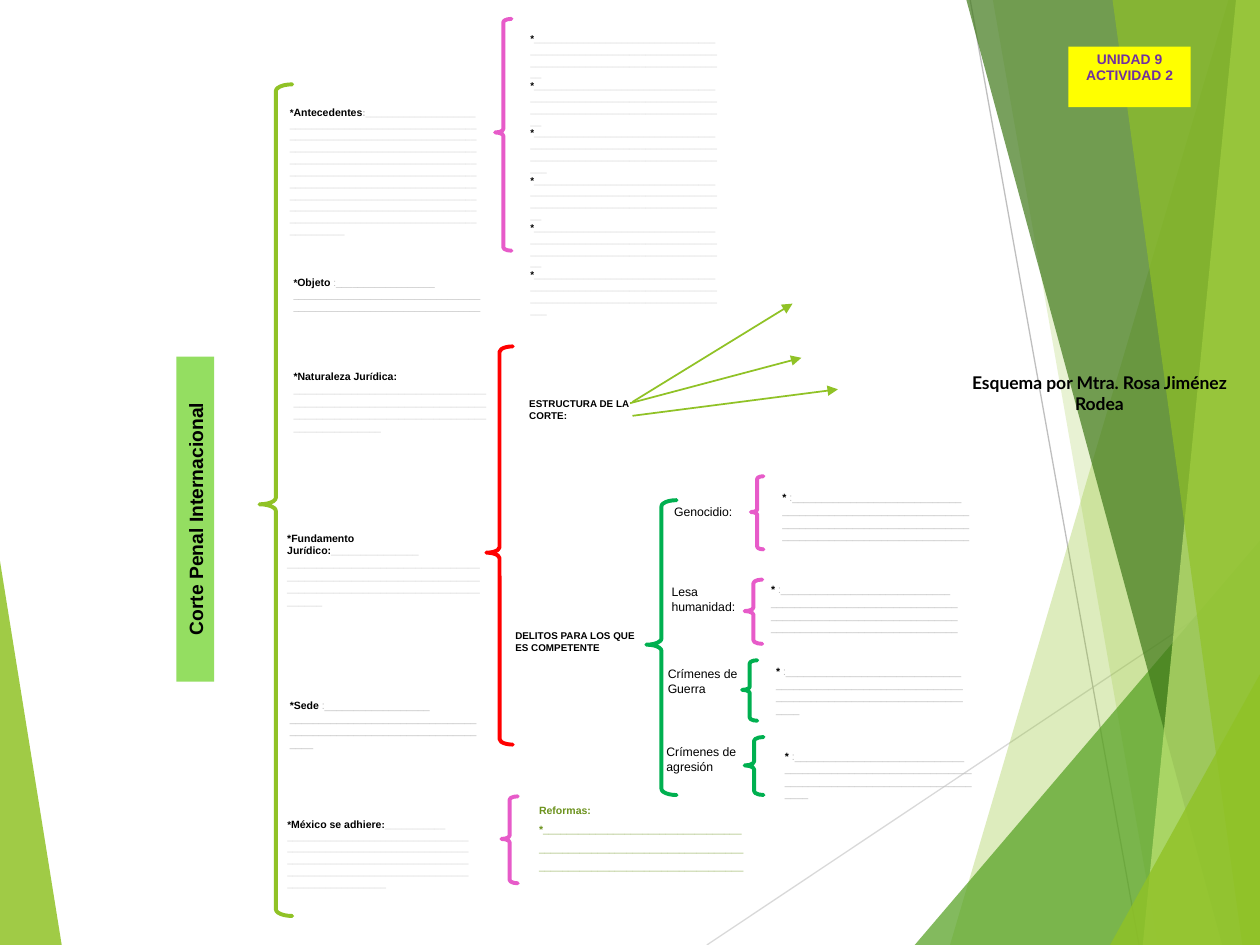
from lxml.etree import SubElement
from pptx import Presentation
from pptx.dml.color import RGBColor
from pptx.enum.shapes import MSO_CONNECTOR as Connector, MSO_SHAPE as Shape
from pptx.enum.text import MSO_ANCHOR as Anchor, PP_ALIGN as Align
from pptx.oxml.ns import qn
from pptx.util import Inches, Pt

LIME, GREEN, PINK, RED = "90C226", "00B050", "E75BC9", "FF0000"
BLACK, GRAY, WHITE = "000000", "BFBFBF", "FFFFFF"


def color(value):
    """Turn a hex string into a colour."""
    return RGBColor.from_string(value)


def run(text, size=6, tint=BLACK, bold=True, font="Arial"):
    """Describe one run of text."""
    return text, size, tint, bold, font


def rule(count, size=6, bold=True, lead=""):
    """Describe a gray writing line of underscores."""
    return run(lead + "_" * count, size, GRAY, bold)


def write(shape, paragraphs, inset=(0.06, 0.03), align=Align.LEFT, spacing=None, wrap=True):
    """Fill a shape with paragraphs made of described runs."""
    frame = shape.text_frame
    frame.word_wrap = wrap
    frame.vertical_anchor = Anchor.TOP
    frame.margin_left = frame.margin_right = Inches(inset[0])
    frame.margin_top = frame.margin_bottom = Inches(inset[1])
    for index, runs in enumerate(paragraphs):
        paragraph = frame.add_paragraph() if index else frame.paragraphs[0]
        paragraph.alignment = align
        paragraph.line_spacing = spacing
        for text, size, tint, bold, font in runs:
            piece = paragraph.add_run()
            piece.text = text
            piece.font.size, piece.font.bold, piece.font.name = Pt(size), bold, font
            piece.font.color.rgb = color(tint)


def add_note(slide, left, top, width, height, paragraphs, **layout):
    """Add a text box."""
    box = slide.shapes.add_textbox(Inches(left), Inches(top), Inches(width), Inches(height))
    write(box, paragraphs, **layout)
    return box


def add_panel(slide, left, top, width, height, fill, paragraphs, align=Align.LEFT):
    """Add a filled rectangle with text."""
    panel = slide.shapes.add_shape(
        Shape.RECTANGLE, Inches(left), Inches(top), Inches(width), Inches(height))
    panel.shadow.inherit = False
    panel.fill.solid()
    panel.fill.fore_color.rgb = color(fill)
    panel.line.fill.background()
    write(panel, paragraphs, align=align)
    return panel


def add_brace(slide, left, top, width, height, tint, middle=0.49):
    """Add a left brace whose point sits at the given share of its height."""
    brace = slide.shapes.add_shape(
        Shape.LEFT_BRACE, Inches(left), Inches(top), Inches(width), Inches(height))
    brace.shadow.inherit = False
    brace.fill.background()
    brace.line.color.rgb = color(tint)
    brace.line.width = Pt(2.25)
    brace.adjustments[0], brace.adjustments[1] = 0.204, middle
    brace._element.spPr.find(qn("a:ln")).set("cap", "rnd")


def add_line(slide, start, end, tint, width, arrow=False):
    """Add a straight line, with an arrowhead on request."""
    line = slide.shapes.add_connector(
        Connector.STRAIGHT, *(Inches(value) for value in (*start, *end)))
    line.line.color.rgb = color(tint)
    line.line.width = Pt(width)
    properties = line._element.spPr
    if arrow:
        SubElement(properties.find(qn("a:ln")), qn("a:tailEnd"), type="triangle")
    SubElement(properties, qn("a:effectLst"))


def add_facet(slide, points, tint, opacity):
    """Add a translucent polygon."""
    start, *others = [(Inches(x), Inches(y)) for x, y in points]
    builder = slide.shapes.build_freeform(*start)
    builder.add_line_segments(others, close=True)
    facet = builder.convert_to_shape()
    facet.shadow.inherit = False
    facet.fill.solid()
    facet.fill.fore_color.rgb = color(tint)
    facet.line.fill.background()
    tone = facet._element.spPr.find(qn("a:solidFill"))[0]
    SubElement(tone, qn("a:alpha"), val=str(opacity * 1000))


def add_backdrop(slide, right, bottom):
    """Draw the green facets and thin lines out to the given slide edges."""
    add_facet(slide, [(-0.01, 4.39), (0.49, bottom), (-0.01, bottom)], LIME, 85)
    add_line(slide, (5.61, bottom), (right, 4.57), "D9D9D9", 0.75)
    add_line(slide, (7.7, 0), (9.04, bottom), GRAY, 0.75)
    for top_left, bottom_left, tint, opacity in [
        ((9.75, 0), 7.54, LIME, 30),
        ((7.88, 0), 9.19, LIME, 20),
        ((right, 4.29), 7.26, "54A021", 72),
        ((7.67, 0), 9.7, "3F7819", 70),
        ((9.81, 0), 9.07, "C0E474", 70),
        ((8.83, 0), 9.86, LIME, 65),
        ((right, 5.35), 8.81, LIME, 80),
    ]:
        corners = [top_left, (bottom_left, bottom), (right, bottom)]
        if top_left[0] < right:
            corners.append((right, 0))
        add_facet(slide, corners, tint, opacity)


def add_concepts(slide, left, top):
    """Place the vertical title, its brace and the six main concepts."""
    title = add_panel(slide, left, top + 2.16, 0.3, 2.58, "94DE61",
                      [[run("Corte Penal Internacional", 11)]], Align.CENTER)
    title.rotation = 180
    title.text_frame._txBody.bodyPr.set("vert", "vert")
    add_brace(slide, left + 0.66, top, 0.26, 6.6, LIME, 0.505)
    accent = run("í", font="Calibri")
    for x, y, width, height, paragraphs in [
        (0.84, 0.14, 1.63, 1.1, [[run("*", 5.6), run("Antecedentes"), rule(336, 5.6, lead=":")]]),
        (0.87, 1.49, 1.63, 0.5, [[run("*", 5.6), run("Objeto"), run(" ", 5.6),
                                  rule(18, 5.6, False, ":"), rule(68, 5.6, False, " ")]]),
        (0.87, 2.24, 1.66, 0.39, [[run("*Naturaleza Jur"), accent, run("dica: "), rule(114)]]),
        (0.82, 3.52, 1.66, 0.39, [[run("*Fundamento Jur"), accent, run("dico:"), rule(15)],
                                  [rule(105)]]),
        (0.84, 4.85, 1.63, 0.5, [[run("*Sede "), rule(18, 6, False, ":"),
                                  rule(68, 6, False, " ")]]),
        (0.82, 5.79, 1.59, 0.47, [[run("*", 5.6), run("México se adhiere"), run(":", 5.6),
                                   rule(11, 5.6)], [rule(150, 5.6)]]),
    ]:
        add_note(slide, left + x, top + y, width, height, paragraphs)


def add_background_list(slide, left, top):
    """Place the brace and the six starred writing lines."""
    add_brace(slide, left, top, 0.13, 1.84, PINK)
    add_note(slide, left + 0.22, top + 0.08, 1.63, 1.84,
             [[run("*", 5.6), rule(count, 5.6)] for count in (103, 103, 104) * 2])


def add_court_structure(slide, left, top):
    """Place the red brace, the court heading and its three arrows."""
    add_brace(slide, left, top, 0.21, 3.16, RED, 0.518)
    add_panel(slide, left + 0.28, top + 0.38, 0.98, 0.48, WHITE,
              [[run("ESTRUCTURA DE LA CORTE:", 5.6)]])
    for (x, y), (end_x, end_y) in [((1.16, 0.44), (2.43, -0.34)),
                                   ((1.14, 0.45), (2.5, 0.09)),
                                   ((1.16, 0.55), (2.79, 0.34))]:
        add_line(slide, (left + x, top + y), (left + end_x, top + end_y), LIME, 1, True)


def add_crimes(slide, left, top):
    """Place the crimes heading and one braced row for each crime."""
    add_panel(slide, left, top + 1.19, 1.07, 0.48, WHITE,
              [[run("DELITOS PARA LOS QUE ES COMPETENTE", 5.6)]])
    add_brace(slide, left + 1.1, top + 0.19, 0.24, 2.34, GREEN)
    for name, label, brace, tint, answer, counts in [
        ("Genocidio:", (1.26, 0.16, 0.65), (1.93, 0, 0.1, 0.58), PINK, (2.12, 0.09), (29, 96)),
        ("Lesa humanidad:", (1.24, 0.74, 0.74), (1.88, 0.82, 0.14, 0.51), PINK,
         (2.03, 0.82), (29, 96)),
        ("Crímenes de Guerra", (1.21, 1.39, 0.74), (1.86, 1.46, 0.12, 0.48), GREEN,
         (2.07, 1.47), (30, 68)),
        ("Crímenes de agresión", (1.2, 2.01, 0.74), (1.88, 2.07, 0.15, 0.46), GREEN,
         (2.14, 2.14), (29, 68)),
    ]:
        x, y, width = label
        add_note(slide, left + x, top + y, width, 0.58, [[run(name, 7, bold=False)]],
                 inset=(0.06, 0.14))
        x, y, *size = brace
        add_brace(slide, left + x, top + y, *size, tint)
        x, y = answer
        add_note(slide, left + x, top + y, 1.63, 0.5,
                 [[run("* "), rule(counts[0], 6, False, ":"), rule(counts[1], 6, False, " ")]])


def add_reforms(slide, left, top):
    """Place the brace and the writing lines for the reforms."""
    add_brace(slide, left, top, 0.13, 0.69, PINK)
    lines = ["Reformas:", "*" + "_" * 34, "_" * 35, "_" * 35]
    add_note(slide, left + 0.2, top - 0.04, 1.88, 0.99,
             [[run(line, 6, "6C921D")] for line in lines],
             inset=(0.1, 0.05), spacing=1.5, wrap=False)


def add_credits(slide, left, top):
    """Place the unit label and the author line."""
    add_panel(slide, left + 1.03, top, 0.97, 0.48, "FFFF00",
              [[run(line, 7.9, "7030A0")] for line in ("UNIDAD 9", "ACTIVIDAD 2")], Align.CENTER)
    add_note(slide, left, top + 2.53, 2.55, 0.44,
             [[run("Esquema por Mtra. Rosa Jiménez Rodea", 10, font="Lato")]],
             inset=(0.1, 0.05), align=Align.CENTER)


def main():
    """Build the slide and save it."""
    presentation = Presentation()
    presentation.slide_width, presentation.slide_height = Inches(10), Inches(7.5)
    slide = presentation.slides.add_slide(presentation.slide_layouts[6])
    add_backdrop(slide, 10, 7.5)
    add_concepts(slide, 1.4, 0.67)
    add_background_list(slide, 3.93, 0.15)
    add_court_structure(slide, 3.86, 2.75)
    add_crimes(slide, 4.03, 3.78)
    add_reforms(slide, 3.98, 6.32)
    add_credits(slide, 7.45, 0.37)
    presentation.save("out.pptx")


if __name__ == "__main__":
    main()
